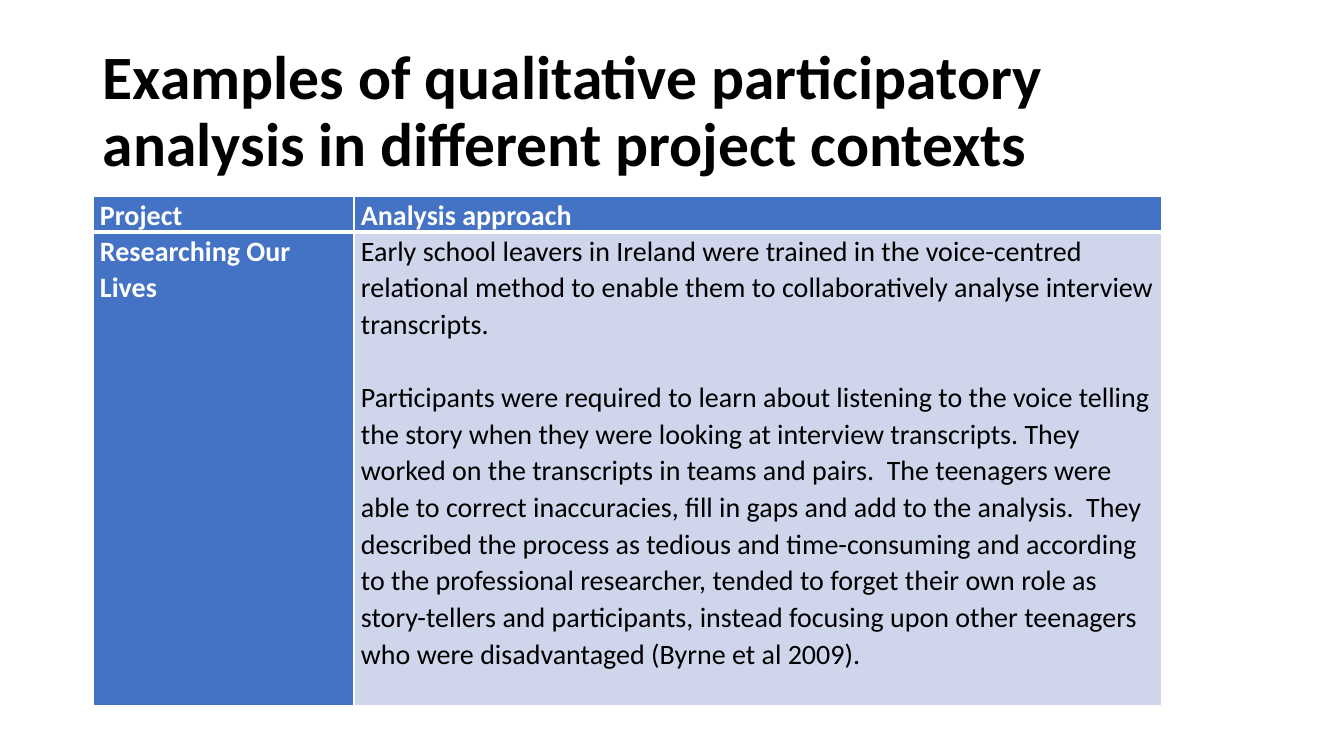
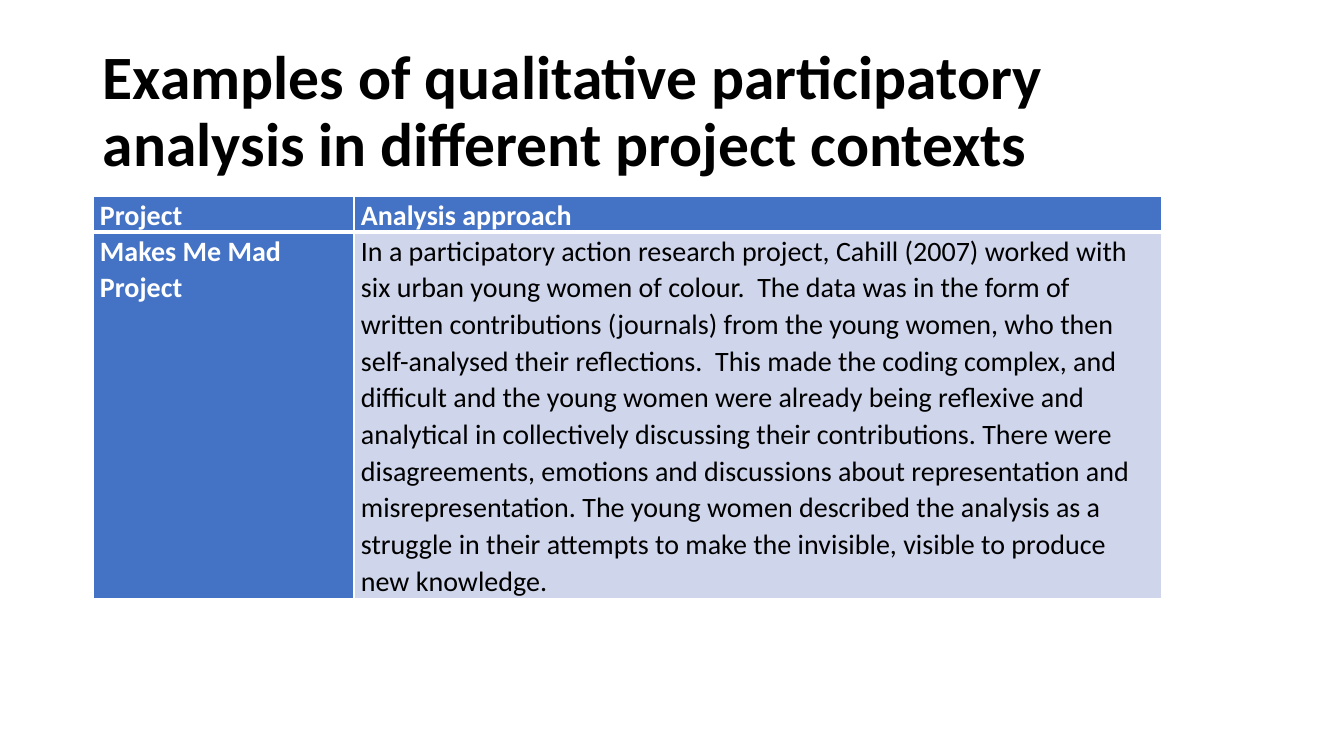
from lxml.etree import SubElement
from pptx import Presentation
from pptx.dml.color import RGBColor
from pptx.enum.text import MSO_ANCHOR
from pptx.oxml.ns import qn
from pptx.util import Emu, Pt

PAGE_WIDTH, PAGE_HEIGHT = 1344, 756
SCALE = 12192000 / PAGE_WIDTH

TITLE = "Examples of qualitative participatory analysis in different project contexts"
HEADINGS = ["Project", "Analysis approach"]
# Project name, paragraphs on its analysis approach, height of the row
PROJECTS = [
    (
        "Researching Our Lives",
        [
            "Early school leavers in Ireland were trained in the voice-centred relational "
            "method to enable them to collaboratively analyse interview transcripts.",
            "Participants were required to learn about listening to the voice telling the "
            "story when they were looking at interview transcripts. They worked on the "
            "transcripts in teams and pairs.  The teenagers were able to correct "
            "inaccuracies, fill in gaps and add to the analysis.  They described the "
            "process as tedious and time-consuming and according to the professional "
            "researcher, tended to forget their own role as story-tellers and "
            "participants, instead focusing upon other teenagers who were disadvantaged "
            "(Byrne et al 2009).",
        ],
        474,
    ),
    (
        "Makes Me Mad Project",
        [
            "In a participatory action research project, Cahill (2007) worked with six "
            "urban young women of colour.  The data was in the form of written "
            "contributions (journals) from the young women, who then self-analysed their "
            "reflections.  This made the coding complex, and difficult and the young women "
            "were already being reflexive and analytical in collectively discussing their "
            "contributions. There were disagreements, emotions and discussions about "
            "representation and misrepresentation. The young women described the analysis "
            "as a struggle in their attempts to make the invisible, visible to produce new "
            "knowledge.",
        ],
        367,
    ),
]


def px(length):
    return Emu(round(length * SCALE))


def color(value):
    return RGBColor.from_string(value)


class Slides:
    FONT = "Calibri"
    BLACK, WHITE = "000000", "FFFFFF"
    BLUE, PALE_BLUE = "4472C4", "CFD5EA"
    TITLE_SIZE, TABLE_SIZE = 44, 20
    PARAGRAPH_GAP = 26
    LEFT = 93
    THIN, THICK = 1, 3

    def __init__(self):
        self.deck = Presentation()
        self.deck.slide_width = px(PAGE_WIDTH)
        self.deck.slide_height = px(PAGE_HEIGHT)
        self.page = None

    def add_page(self):
        self.page = self.deck.slides.add_slide(self.deck.slide_layouts[6])

    def add_text(self, frame, texts, size, ink, bold, line_spacing):
        frame.word_wrap = True
        for index, text in enumerate(texts):
            para = frame.add_paragraph() if index else frame.paragraphs[0]
            para.line_spacing = line_spacing
            para.space_before = Pt(self.PARAGRAPH_GAP if index else 0)
            span = para.add_run()
            span.text = text
            span.font.name = self.FONT
            span.font.size = Pt(size)
            span.font.bold = bold
            span.font.color.rgb = color(ink)

    def title(self, text):
        box = self.page.shapes.add_textbox(px(self.LEFT), px(40), px(1159), px(146))
        box.text_frame.vertical_anchor = MSO_ANCHOR.MIDDLE
        self.add_text(box.text_frame, [text], self.TITLE_SIZE, self.BLACK, True, 0.9)

    def borders(self, cell, top, bottom):
        """Draw white cell borders; the sides are always thin."""
        properties = cell._tc.get_or_add_tcPr()
        widths = {"L": self.THIN, "R": self.THIN, "T": top, "B": bottom}
        for side, width in widths.items():
            line = SubElement(properties, qn(f"a:ln{side}"), w=str(Pt(width)))
            fill = SubElement(line, qn("a:solidFill"))
            SubElement(fill, qn("a:srgbClr"), val=self.WHITE)

    def cell(self, cell, texts, is_label, top, bottom):
        cell.margin_left = cell.margin_right = px(7)
        cell.margin_top = cell.margin_bottom = 0
        self.borders(cell, top, bottom)
        cell.fill.solid()
        cell.fill.fore_color.rgb = color(self.BLUE if is_label else self.PALE_BLUE)
        ink = self.WHITE if is_label else self.BLACK
        self.add_text(cell.text_frame, texts, self.TABLE_SIZE, ink, is_label, 1.07)

    def project_table(self, project, approach, body_height):
        widths, heights = [261, 808], [35, body_height]
        table = self.page.shapes.add_table(
            2, 2, px(self.LEFT), px(196), px(sum(widths)), px(sum(heights))
        ).table
        table.horz_banding = False
        for column, width in zip(table.columns, widths):
            column.width = px(width)
        for row, height in zip(table.rows, heights):
            row.height = px(height)
        for index, heading in enumerate(HEADINGS):
            self.cell(table.cell(0, index), [heading], True, self.THIN, self.THICK)
        for index, texts in enumerate([[project], approach]):
            self.cell(table.cell(1, index), texts, index == 0, self.THICK, self.THIN)


def main():
    slides = Slides()
    for project, approach, body_height in PROJECTS:
        slides.add_page()
        slides.title(TITLE)
        slides.project_table(project, approach, body_height)
    slides.deck.save("out.pptx")


if __name__ == "__main__":
    main()
